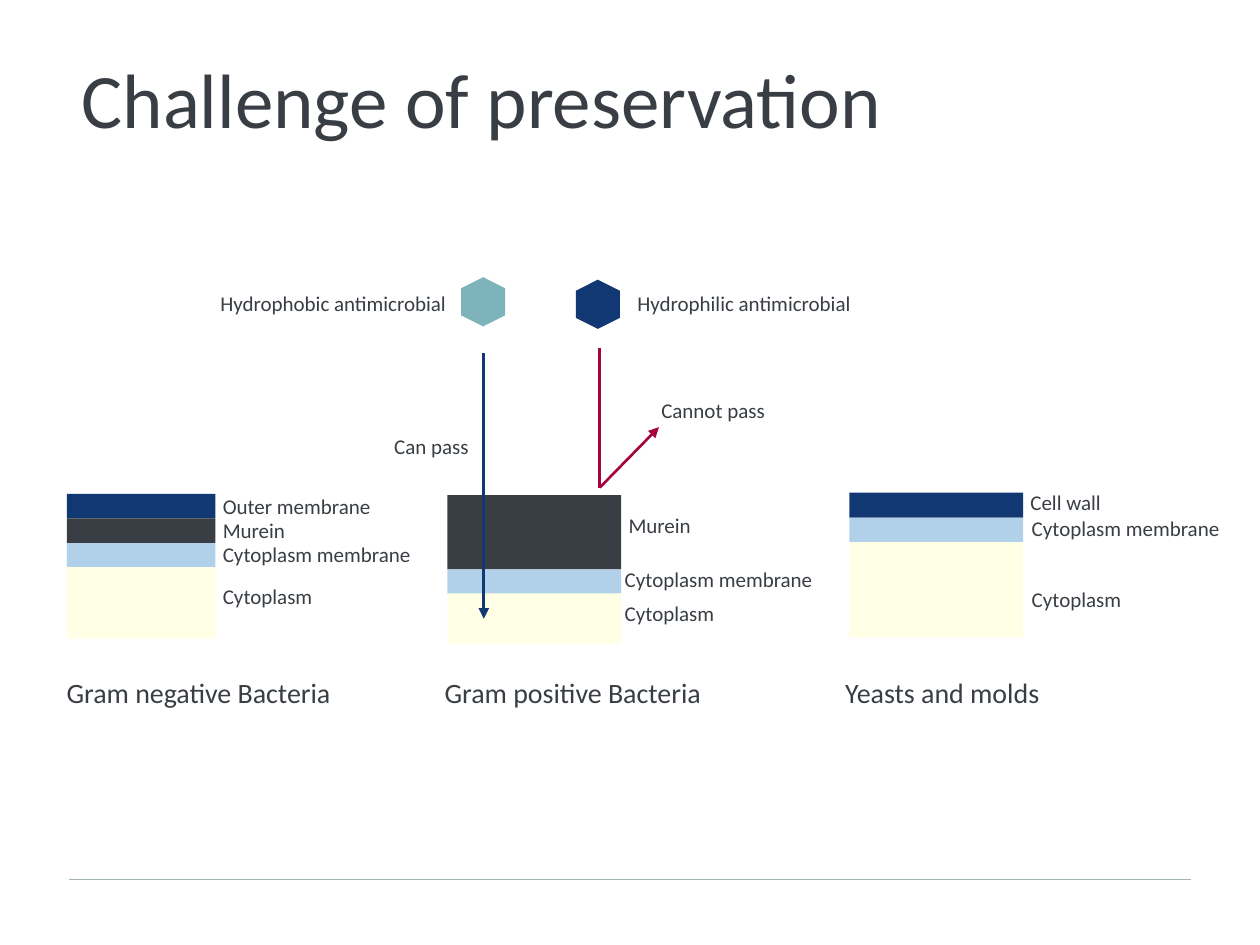
from dataclasses import dataclass

from lxml.etree import SubElement as Sub
from pptx import Presentation
from pptx.dml.color import RGBColor as Rgb
from pptx.enum.shapes import MSO_CONNECTOR as Conn, MSO_SHAPE as Kind
from pptx.oxml.ns import qn
from pptx.util import Inches, Pt


@dataclass(frozen=True)
class Theme:
    font: str = "Calibri"
    ink: str = "393E44"
    navy: str = "113873"
    sky: str = "B1D1EB"
    teal: str = "7EB3BB"
    yolk: str = "FFFF00"
    red: str = "A70240"
    rule: str = "A2B4B8"
    title: int = 44
    head: int = 16
    note: int = 12
    thin: float = 0.75
    bold: float = 1.5


T = Theme()

# Grid of 100 columns by 75 rows; every length below is in cells
COLS, ROWS = 100, 75
WIDE, HIGH = Inches(10), Inches(7.5)


def col(n):
    return round(WIDE * n / COLS)


def row(n):
    return round(HIGH * n / ROWS)


def box(x, y, w, h):
    return col(x), row(y), col(w), row(h)


def text(slide, words, x, y, w, h, size=T.note):
    frame = slide.shapes.add_textbox(*box(x, y, w, h)).text_frame
    frame.word_wrap = True
    run = frame.paragraphs[0].add_run()
    run.text = words
    for key, val in {"name": T.font, "size": Pt(size)}.items():
        setattr(run.font, key, val)
    run.font.color.rgb = Rgb.from_string(T.ink)


def block(slide, kind, hue, x, y, w, h, turn=0, alpha=100):
    part = slide.shapes.add_shape(kind, *box(x, y, w, h))
    part.shadow.inherit = False
    part.rotation = turn
    part.fill.solid()
    part.fill.fore_color.rgb = Rgb.from_string(hue)
    part.line.fill.background()
    if alpha < 100:
        tint = part.fill._xPr.find(".//" + qn("a:srgbClr"))
        Sub(tint, qn("a:alpha"), val=str(alpha * 1000))


def line(slide, hue, x1, y1, x2, y2, width=T.bold, head=False):
    wire = slide.shapes.add_connector(
        Conn.STRAIGHT, col(x1), row(y1), col(x2), row(y2))
    wire.line.width = Pt(width)
    wire.line.color.rgb = Rgb.from_string(hue)
    if head:
        Sub(wire.line._get_or_add_ln(), qn("a:tailEnd"), type="triangle")
    Sub(wire._element.spPr, qn("a:effectLst"))


def wall(slide, name, x, y, w, name_x, layers):
    """Stack layers (hue, height, alpha, label, label x, label y) downward."""
    for hue, h, alpha, label, lx, ly in layers:
        block(slide, Kind.RECTANGLE, hue, x, y, w, h, alpha=alpha)
        text(slide, label, lx, ly, 18.7, 3)
        y += h
    text(slide, name, name_x, 53.1, 25.9, 3.7, T.head)


def agent(slide, hue, x, y, label, lx):
    block(slide, Kind.HEXAGON, hue, x, y, 3.9, 3.5, turn=270)
    text(slide, label, lx, 22.6, 21.7, 3)


def main():
    deck = Presentation()
    deck.slide_width, deck.slide_height = WIDE, HIGH
    slide = deck.slides.add_slide(deck.slide_layouts[6])

    # Title and footer rule
    line(slide, T.rule, 5.5, 69.8, 94.5, 69.8, T.thin)
    text(slide, "Challenge of preservation", 5.5, 3.6, 89, 11, T.title)

    # Cell walls
    wall(slide, "Gram negative Bacteria", 5.3, 39.2, 11.8, 4.3, [
        (T.navy, 1.95, 100, "Outer membrane", 16.7, 38.7),
        (T.ink, 1.95, 100, "Murein", 16.7, 40.6),
        (T.sky, 1.9, 100, "Cytoplasm membrane", 16.7, 42.5),
        (T.yolk, 5.7, 10, "Cytoplasm", 16.7, 45.8)])
    wall(slide, "Gram positive Bacteria", 35.5, 39.3, 13.8, 34.3, [
        (T.ink, 5.9, 100, "Murein", 48.9, 40.2),
        (T.sky, 1.9, 100, "Cytoplasm membrane", 48.6, 44.5),
        (T.yolk, 4, 10, "Cytoplasm", 48.6, 47.2)])
    wall(slide, "Yeasts and molds", 67.4, 39.1, 13.8, 66.1, [
        (T.navy, 2, 100, "Cell wall", 80.8, 38.4),
        (T.sky, 1.9, 100, "Cytoplasm membrane", 80.9, 40.4),
        (T.yolk, 7.6, 10, "Cytoplasm", 80.9, 46.1)])

    # Antimicrobials
    agent(slide, T.teal, 36.4, 22.2, "Hydrophobic antimicrobial", 16.5)
    agent(slide, T.navy, 45.5, 22.4, "Hydrophilic antimicrobial", 49.6)

    # Paths: one bounces off, one goes through
    line(slide, T.red, 47.6, 27.6, 47.6, 38.7)
    line(slide, T.red, 47.6, 38.7, 52.3, 33.9, head=True)
    text(slide, "Cannot pass", 51.5, 31.1, 12.3, 3)
    line(slide, T.navy, 38.4, 28, 38.4, 49.1, head=True)
    text(slide, "Can pass", 30.3, 33.9, 8.7, 3)

    deck.save("out.pptx")


if __name__ == "__main__":
    main()
